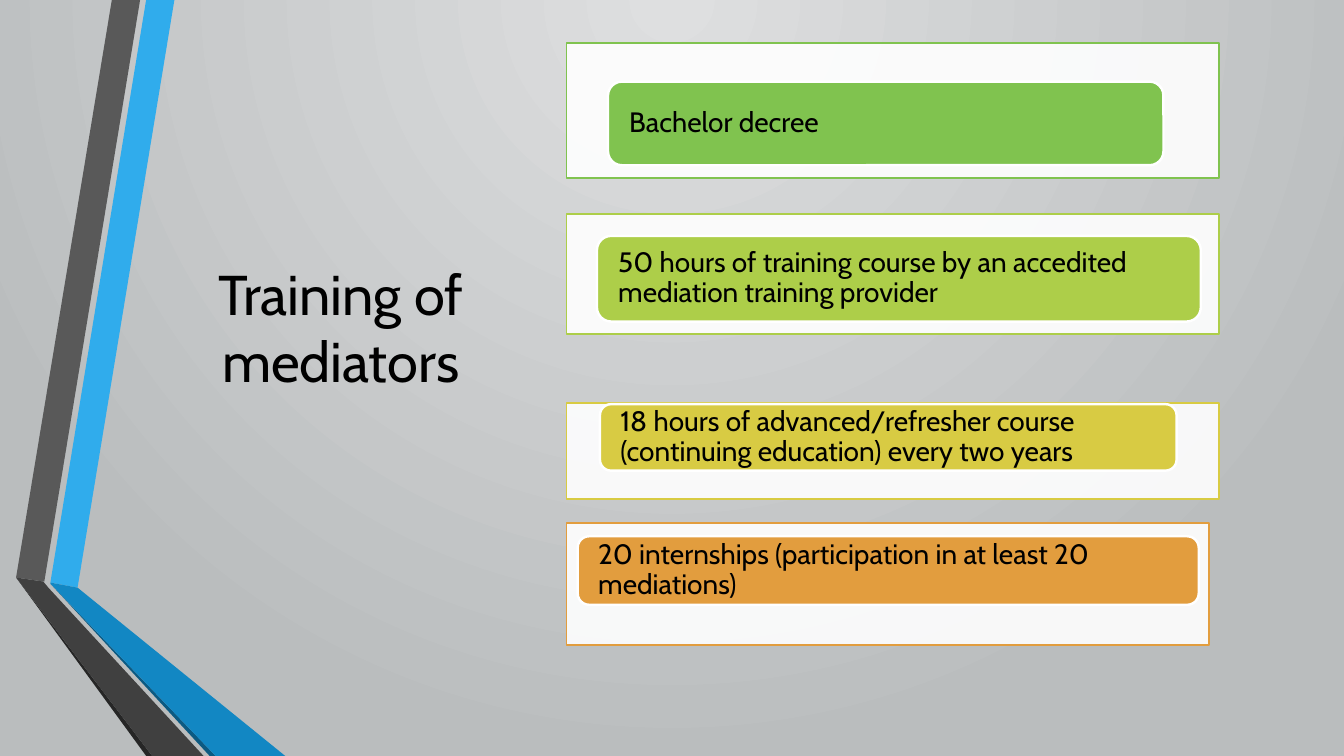
from pptx import Presentation
from pptx.dml.color import RGBColor
from pptx.enum.shapes import MSO_SHAPE
from pptx.enum.text import MSO_ANCHOR, PP_ALIGN
from pptx.oxml.ns import qn
from pptx.util import Pt
from lxml import etree

RECT, ROUNDED = MSO_SHAPE.RECTANGLE, MSO_SHAPE.ROUNDED_RECTANGLE
TOP, MIDDLE = MSO_ANCHOR.TOP, MSO_ANCHOR.MIDDLE
LEFT, CENTER = PP_ALIGN.LEFT, PP_ALIGN.CENTER
PX = 9144
FONT = "Cabin"
COLORS = {
    "black": "000000", "white": "FFFFFF",
    "glow": "DEDFE0", "backdrop": "BABDBE",
    "blue": "30ACEC", "blue_fold": "1287C3", "blue_edge": "0C5A82",
    "grey": "595959", "grey_fold": "404040", "grey_edge": "262626",
    "green": "80C34F", "lime": "ADCE49", "yellow": "D8CB43", "orange": "E29D3E",
}
RIBBONS = [
    ("blue", [(50, 578), (77, 583), (173, 0), (145, 0)]),
    ("grey", [(139, 0), (111, 0), (16, 573), (44, 577)]),
    ("grey_edge", [(16, 573), (145, 750), (151, 750)]),
    ("blue_edge", [(50, 579), (208, 750), (214, 750)]),
    ("blue_fold", [(50, 579), (214, 750), (283, 750), (77, 583), (50, 578)]),
    ("grey_fold", [(202, 750), (48, 583), (43, 577), (16, 573), (151, 750)]),
]
REQUIREMENTS = [
    ("Bachelor decree", "green",
     (562, 43, 647, 134), (603, 81, 551, 83)),
    ("50 hours of training course by an accedited mediation training provider", "lime",
     (562, 212, 647, 119), (592, 234, 599, 85)),
    ("18 hours of advanced/refresher course (continuing education) every two years", "yellow",
     (562, 400, 647, 95), (595, 401, 572, 66)),
    ("20 internships (participation in at least 20 mediations)", "orange",
     (562, 519, 637, 121), (573, 532, 616, 68)),
]


def rgb(name):
    return RGBColor.from_string(COLORS[name])


def write(shape, text, size=20, color="black", align=LEFT, anchor=MIDDLE,
          spacing=1.0, inset=(10, 5)):
    frame = shape.text_frame
    frame.word_wrap = True
    frame.vertical_anchor = anchor
    frame.margin_left = frame.margin_right = inset[0] * PX
    frame.margin_top = frame.margin_bottom = inset[1] * PX
    paragraph = frame.paragraphs[0]
    paragraph.alignment = align
    paragraph.line_spacing = spacing
    run = paragraph.add_run()
    run.text = text
    run.font.name = FONT
    run.font.size = Pt(size)
    run.font.color.rgb = rgb(color)


class SlideBuilder:
    """Draws styled elements on one slide, measured in px."""

    def __init__(self, slide):
        self.slide = slide

    def background(self, inner, outer):
        fill = self.slide.background.fill
        fill.gradient()
        for stop, color in zip(fill.gradient_stops, (inner, outer)):
            stop.color.rgb = rgb(color)
        linear = next(self.slide.element.iter(qn("a:lin")))
        radial = etree.Element(qn("a:path"), {"path": "circle"})
        etree.SubElement(radial, qn("a:fillToRect"),
                         {"l": "43000", "t": "0", "r": "43000", "b": "100000"})
        linear.getparent().replace(linear, radial)

    def ribbon(self, color, points):
        outline = self.slide.shapes.build_freeform(*points[0], scale=PX)
        outline.add_line_segments(points[1:], close=True)
        band = outline.convert_to_shape()
        band.shadow.inherit = False
        band.fill.solid()
        band.fill.fore_color.rgb = rgb(color)
        band.line.fill.background()

    def title(self, text, box):
        heading = self.slide.shapes.title
        heading.left, heading.top, heading.width, heading.height = (n * PX for n in box)
        write(heading, text, size=40, align=CENTER, anchor=TOP)

    def box(self, preset, bounds, fill, line, line_width, opacity=100):
        shape = self.slide.shapes.add_shape(preset, *(n * PX for n in bounds))
        shape.shadow.inherit = False
        shape.fill.solid()
        shape.fill.fore_color.rgb = rgb(fill)
        shape.line.color.rgb = rgb(line)
        shape.line.width = Pt(line_width)
        if opacity < 100:
            tint = next(shape.element.spPr.iter(qn("a:srgbClr")))
            etree.SubElement(tint, qn("a:alpha"), {"val": str(opacity * 1000)})
        return shape

    def requirement(self, text, color, panel, label):
        self.box(RECT, panel, "white", color, 1.25, opacity=90)
        card = self.box(ROUNDED, label, color, "white", 1.75)
        write(card, text, spacing=0.9, inset=(17, 0))


def main():
    deck = Presentation()
    deck.slide_width, deck.slide_height = 1333 * PX, 750 * PX
    builder = SlideBuilder(deck.slides.add_slide(deck.slide_layouts[5]))
    builder.background("glow", "backdrop")
    for color, points in RIBBONS:
        builder.ribbon(color, points)
    builder.title("Training of mediators", (159, 252, 358, 292))
    for requirement in REQUIREMENTS:
        builder.requirement(*requirement)
    deck.save("out.pptx")


if __name__ == "__main__":
    main()
